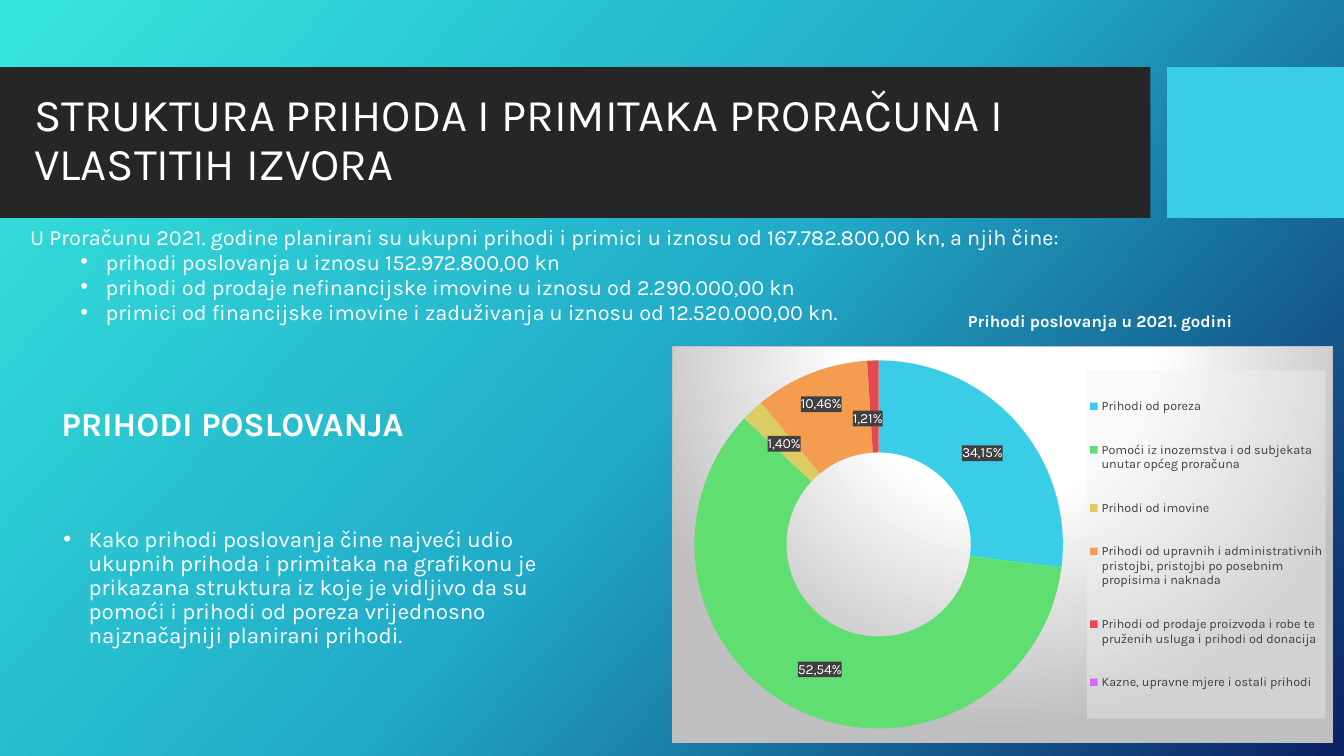
from lxml import etree
from pptx import Presentation
from pptx import util as u
from pptx.chart import data
from pptx.dml import color
from pptx.enum import chart as charts, shapes, text
from pptx.oxml import ns

FONT = "Karla"
WHITE = "FFFFFF"
GREY = "BFBFBF"
DARK = "404040"

BACKGROUND_STOPS = [(0, "36E6DD"), (50, "21ABC8"), (100, "0C2263")]
CHART_STOPS = [(0, WHITE), (39, WHITE), (100, GREY)]

BANDS = [((0, 48, 821.75, 107.75), "262626"), ((833.75, 48, 126.25, 107.75), "39CDE7")]

TEXTS = [
    {"at": (17.3, 65.5, 913, 71.3), "anchor": "MIDDLE", "size": 32.4,
     "lines": ["STRUKTURA PRIHODA I PRIMITAKA PRORAČUNA I \vVLASTITIH IZVORA"]},
    {"at": (36.7, 275, 366.5, 45.4), "anchor": "BOTTOM", "size": 24, "bold": True,
     "lines": ["PRIHODI POSLOVANJA"]},
    {"at": (38.2, 337.4, 388.8, 165.6), "anchor": "MIDDLE", "size": 16, "indents": [18],
     "lines": ["Kako prihodi poslovanja čine najveći udio ukupnih prihoda i primitaka na "
               "grafikonu je prikazana struktura iz koje je vidljivo da su pomoći i prihodi "
               "od poreza vrijednosno najznačajniji planirani prihodi."]},
    {"at": (625.7, 220, 320.4, 26.6), "size": 12, "bold": True, "align": "CENTER",
     "lines": ["Prihodi poslovanja u 2021. godini"]},
    {"at": (14.4, 161.3, 913, 85.7), "size": 15.5, "spacing": 0.7,
     "indents": [0, 54, 54, 54],
     "lines": ["U Proračunu 2021. godine planirani su ukupni prihodi i primici u iznosu od "
               "167.782.800,00 kn, a njih čine:",
               "prihodi poslovanja u iznosu 152.972.800,00 kn",
               "prihodi od prodaje nefinancijske imovine u iznosu od 2.290.000,00 kn",
               "primici od financijske imovine i zaduživanja u iznosu od 12.520.000,00 kn."]},
]

CHART_AT = (480, 247.2, 472, 283.5)
SLICES = [
    ("Prihodi od poreza", 27, "34,15%", "39CDE7", None),
    ("Pomoći iz inozemstva i od subjekata unutar općeg proračuna",
     60, "52,54%", "60DE72", None),
    ("Prihodi od imovine", 2, "1,40%", "DDCC64", None),
    ("Prihodi od upravnih i administrativnih pristojbi, pristojbi po posebnim propisima "
     "i naknada", 10, "10,46%", "F49D50", (-0.01, -0.03)),
    ("Prihodi od prodaje proizvoda i robe te pruženih usluga i prihodi od donacija",
     1, "1,21%", "E44951", (-0.01, 0.03)),
    ("Kazne, upravne mjere i ostali prihodi", 0, "0,24%", "D666F9", (0, -0.04)),
]
PLOT_AREA = {"x": 0.03, "y": 0.035, "w": 0.565, "h": 0.93}
LEGEND_AREA = {"x": 0.628, "y": 0.06, "w": 0.362, "h": 0.88}


def rgb(code):
    return color.RGBColor.from_string(code)


def xml(markup):
    head, tail = markup.split(">", 1)
    slash = "/" if head.endswith("/") else ""
    return etree.fromstring(f"{head.rstrip('/')} {ns.nsdecls('a', 'c')}{slash}>{tail}")


def gradient(stops, direction):
    marks = "".join(f'<a:gs pos="{at * 1000}"><a:srgbClr val="{code}"/></a:gs>'
                    for at, code in stops)
    return f'<a:gradFill rotWithShape="1"><a:gsLst>{marks}</a:gsLst>{direction}</a:gradFill>'


def solid(code, alpha):
    return (f'<a:solidFill><a:srgbClr val="{code}"><a:alpha val="{alpha * 1000}"/>'
            f'</a:srgbClr></a:solidFill>')


def layout(area, inner=False):
    target = '<c:layoutTarget val="inner"/>' if inner else ""
    modes = "".join(f'<c:{key}Mode val="edge"/>' for key in "xy")
    sizes = "".join(f'<c:{key} val="{value}"/>' for key, value in area.items())
    return xml(f"<c:layout><c:manualLayout>{target}{modes}{sizes}</c:manualLayout></c:layout>")


def set_font(font, size, code, bold=False):
    values = {"name": FONT, "size": u.Pt(size), "bold": bold}
    for key, value in values.items():
        setattr(font, key, value)
    font.color.rgb = rgb(code)


def add_text(page, item):
    box = page.shapes.add_textbox(*map(u.Pt, item["at"]))
    frame = box.text_frame
    values = {"word_wrap": True, "auto_size": text.MSO_AUTO_SIZE.NONE,
              "vertical_anchor": text.MSO_ANCHOR[item.get("anchor", "TOP")]}
    for key, value in values.items():
        setattr(frame, key, value)
    indents = item.get("indents", [0])
    for index, (line, indent) in enumerate(zip(item["lines"], indents)):
        para = frame.add_paragraph() if index else frame.paragraphs[0]
        para.text = line
        if indent:
            props = para._p.get_or_add_pPr()
            props.set("marL", str(u.Pt(indent)))
            props.set("indent", str(u.Pt(-18)))
            props.append(xml('<a:buFont typeface="Arial"/>'))
            props.append(xml('<a:buChar char="•"/>'))
        values = {"line_spacing": item.get("spacing", 0.9),
                  "space_before": u.Pt(5 if index else 0),
                  "alignment": text.PP_ALIGN[item.get("align", "LEFT")]}
        for key, value in values.items():
            setattr(para, key, value)
        for span in para.runs:
            set_font(span.font, item["size"], WHITE, item.get("bold", False))


def add_label(point, label_text, shift):
    para = point.data_label.text_frame.paragraphs[0]
    span = para.add_run()
    span.text = label_text
    set_font(span.font, 10, WHITE)
    rich = span._r.getparent().getparent().getparent()
    rich.addnext(xml(f"<c:spPr>{solid(DARK, 90)}<a:ln><a:noFill/></a:ln></c:spPr>"))
    if shift:
        x, y = shift
        rich.addprevious(xml(f'<c:layout><c:manualLayout><c:x val="{x}"/><c:y val="{y}"/>'
                             f'</c:manualLayout></c:layout>'))


def add_doughnut(page):
    numbers = data.CategoryChartData(number_format="0")
    numbers.categories = [item[0] for item in SLICES]
    numbers.add_series("Series 1", [item[1] for item in SLICES])
    chart = page.shapes.add_chart(charts.XL_CHART_TYPE.DOUGHNUT,
                                  *map(u.Pt, CHART_AT), numbers).chart
    chart.has_title = False
    set_font(chart.font, 10, WHITE)
    chart.has_legend = True
    legend = chart.legend
    legend.position = charts.XL_LEGEND_POSITION.RIGHT
    legend.include_in_layout = False
    set_font(legend.font, 9, DARK)

    plot = chart.plots[0]
    plot.vary_by_categories = True
    series = plot.series[0]
    labels = series.data_labels
    labels.show_percentage = True
    labels.show_value = False
    set_font(labels.font, 10, WHITE)
    for index, (_, _, label_text, code, shift) in enumerate(SLICES):
        point = series.points[index]
        point.format.fill.solid()
        point.format.fill.fore_color.rgb = rgb(code)
        point.format.line.fill.background()
        add_label(point, label_text, shift)

    root = chart._chartSpace
    root.find(".//" + ns.qn("c:holeSize")).set("val", "50")
    area = root.find(".//" + ns.qn("c:plotArea"))
    key = root.find(".//" + ns.qn("c:legend"))
    for holder in (area, key):
        for old in holder.findall(ns.qn("c:layout")):
            holder.remove(old)
    area.insert(0, layout(PLOT_AREA, inner=True))
    key.find(ns.qn("c:legendPos")).addnext(layout(LEGEND_AREA))
    key.find(ns.qn("c:txPr")).addprevious(xml(f"<c:spPr>{solid('F2F2F2', 39)}</c:spPr>"))
    circle = ('<a:path path="circle"><a:fillToRect l="50000" t="-80000" r="50000" '
              'b="180000"/></a:path>')
    border = (f'<a:ln w="{u.Pt(0.75)}"><a:solidFill><a:srgbClr val="{GREY}"/>'
              f'</a:solidFill></a:ln>')
    root.find(ns.qn("c:txPr")).addprevious(
        xml(f"<c:spPr>{gradient(CHART_STOPS, circle)}{border}</c:spPr>"))


def main():
    deck = Presentation()
    deck.slide_width, deck.slide_height = u.Pt(960), u.Pt(540)
    page = deck.slides.add_slide(deck.slide_layouts[6])
    page.background.fill.gradient()
    old = page.element.find(".//" + ns.qn("a:gradFill"))
    old.getparent().replace(
        old, xml(gradient(BACKGROUND_STOPS, f'<a:lin ang="{42 * 60000}" scaled="0"/>')))
    for at, code in BANDS:
        band = page.shapes.add_shape(shapes.MSO_SHAPE.RECTANGLE, *map(u.Pt, at))
        band.shadow.inherit = False
        band.fill.solid()
        band.fill.fore_color.rgb = rgb(code)
        band.line.fill.background()
    for item in TEXTS:
        add_text(page, item)
    add_doughnut(page)
    deck.save("out.pptx")


if __name__ == "__main__":
    main()
